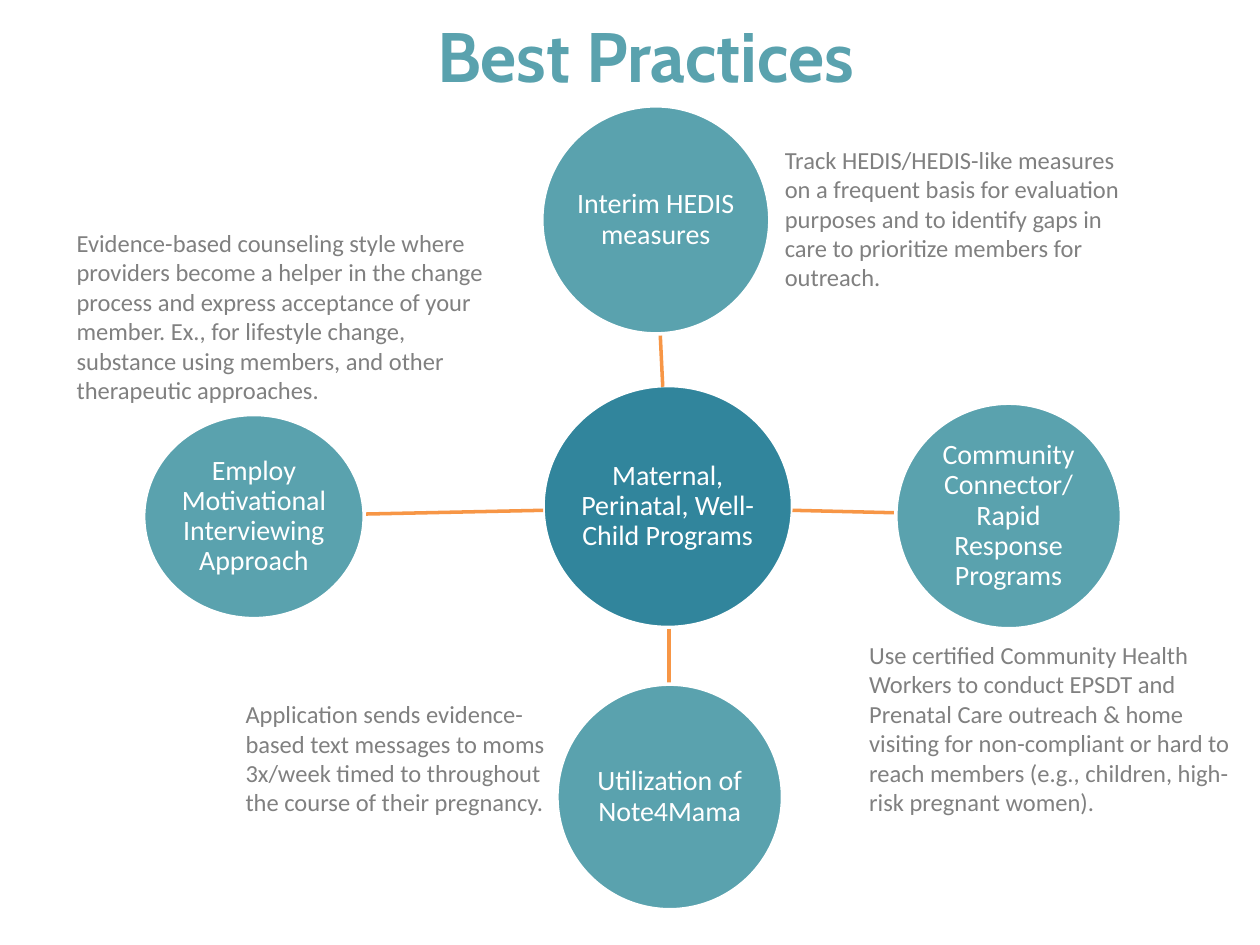
from lxml import etree
from pptx import Presentation
from pptx.dml.color import RGBColor
from pptx.enum.shapes import MSO_CONNECTOR, MSO_SHAPE
from pptx.enum.text import MSO_ANCHOR, PP_ALIGN
from pptx.oxml.ns import qn
from pptx.util import Inches, Pt

OVAL = MSO_SHAPE.OVAL
STRAIGHT = MSO_CONNECTOR.STRAIGHT
TOP, MIDDLE = MSO_ANCHOR.TOP, MSO_ANCHOR.MIDDLE
LEFT, CENTER = PP_ALIGN.LEFT, PP_ALIGN.CENTER

TEAL, DARK_TEAL, ORANGE = "5AA2AE", "31859C", "F79646"
WHITE, GRAY = "FFFFFF", "808080"

TITLE_FONT = {"name": "Cabin", "size": Pt(40), "bold": True}
CIRCLE_FONT = {"name": "Calibri", "size": Pt(16)}
NOTE_FONT = {"name": "Calibri", "size": Pt(14)}
CIRCLE_FRAME = {
    "margin_left": Inches(0.01),
    "margin_right": Inches(0.01),
    "margin_top": Inches(0.01),
    "margin_bottom": Inches(0.01),
}

HUB = ("Maternal, Perinatal, Well-Child Programs", (4.31, 3.06, 1.98, 1.92))
PRACTICES = [
    {
        "name": "Interim HEDIS measures",
        "circle": (4.3, 0.84, 1.81, 1.81),
        "spoke": (5.26, 3.07, 5.24, 2.65),
        "note": "Track HEDIS/HEDIS-like measures on a frequent basis for evaluation "
                "purposes and to identify gaps in care to prioritize members for outreach.",
        "note_box": (6.13, 1.1, 2.98, 1.28),
    },
    {
        "name": "Community Connector/ Rapid Response Programs",
        "circle": (7.11, 3.2, 1.79, 1.79),
        "spoke": (6.29, 4.05, 7.11, 4.07),
        "note": "Use certified Community Health Workers to conduct EPSDT and Prenatal "
                "Care outreach & home visiting for non-compliant or hard to reach "
                "members (e.g., children, high-risk pregnant women).",
        "note_box": (6.8, 5.03, 3.2, 1.51),
    },
    {
        "name": "Utilization of Note4Mama",
        "circle": (4.42, 5.43, 1.79, 1.79),
        "spoke": (5.31, 4.99, 5.31, 5.43),
        "note": "Application sends evidence-based text messages to moms 3x/week timed "
                "to throughout the course of their pregnancy.",
        "note_box": (1.85, 5.5, 2.78, 1.04),
    },
    {
        "name": "Employ Motivational Interviewing Approach",
        "circle": (1.14, 3.29, 1.75, 1.62),
        "spoke": (4.31, 4.05, 2.89, 4.08),
        "note": "Evidence-based counseling style where providers become a helper in the "
                "change process and express acceptance of your member. Ex., for lifestyle "
                "change, substance using members, and other therapeutic approaches.",
        "note_box": (0.51, 1.76, 3.44, 1.51),
    },
]


def rgb(value):
    return RGBColor.from_string(value)


def apply_format(target, values):
    for name, value in values.items():
        setattr(target, name, value)


def to_inches(lengths):
    return [Inches(length) for length in lengths]


def write_text(shape, text, font, color, alignment, anchor):
    frame = shape.text_frame
    apply_format(frame, {"word_wrap": True, "vertical_anchor": anchor})
    paragraph = frame.paragraphs[0]
    paragraph.alignment = alignment
    run = paragraph.add_run()
    run.text = text
    apply_format(run.font, font)
    run.font.color.rgb = rgb(color)
    return paragraph


def add_text(slide, box, text, font, color, alignment=LEFT, anchor=TOP):
    shape = slide.shapes.add_textbox(*to_inches(box))
    write_text(shape, text, font, color, alignment, anchor)


def add_circle(slide, box, text, fill):
    shape = slide.shapes.add_shape(OVAL, *to_inches(box))
    shape.shadow.inherit = False
    shape.fill.solid()
    shape.fill.fore_color.rgb = rgb(fill)
    shape.line.color.rgb = rgb(WHITE)
    shape.line.width = Pt(2)
    apply_format(shape.text_frame, CIRCLE_FRAME)
    paragraph = write_text(shape, text, CIRCLE_FONT, WHITE, CENTER, MIDDLE)
    paragraph.line_spacing = 0.9


def add_spoke(slide, ends):
    connector = slide.shapes.add_connector(STRAIGHT, *to_inches(ends))
    connector.line.color.rgb = rgb(ORANGE)
    connector.line.width = Pt(2)
    etree.SubElement(connector._element.spPr, qn("a:effectLst"))


def add_diagram(slide):
    name, box = HUB
    add_circle(slide, box, name, DARK_TEAL)
    for practice in PRACTICES:
        add_spoke(slide, practice["spoke"])
        add_circle(slide, practice["circle"], practice["name"], TEAL)


def add_notes(slide):
    for practice in PRACTICES:
        add_text(slide, practice["note_box"], practice["note"], NOTE_FONT, GRAY)


def main():
    presentation = Presentation()
    presentation.slide_width = Inches(10)
    presentation.slide_height = Inches(7.5)
    slide = presentation.slides.add_slide(presentation.slide_layouts[6])
    add_text(slide, (0.88, -0.07, 8.49, 1.01), "Best Practices",
             TITLE_FONT, TEAL, CENTER, MIDDLE)
    add_diagram(slide)
    add_notes(slide)
    presentation.save("out.pptx")


if __name__ == "__main__":
    main()
